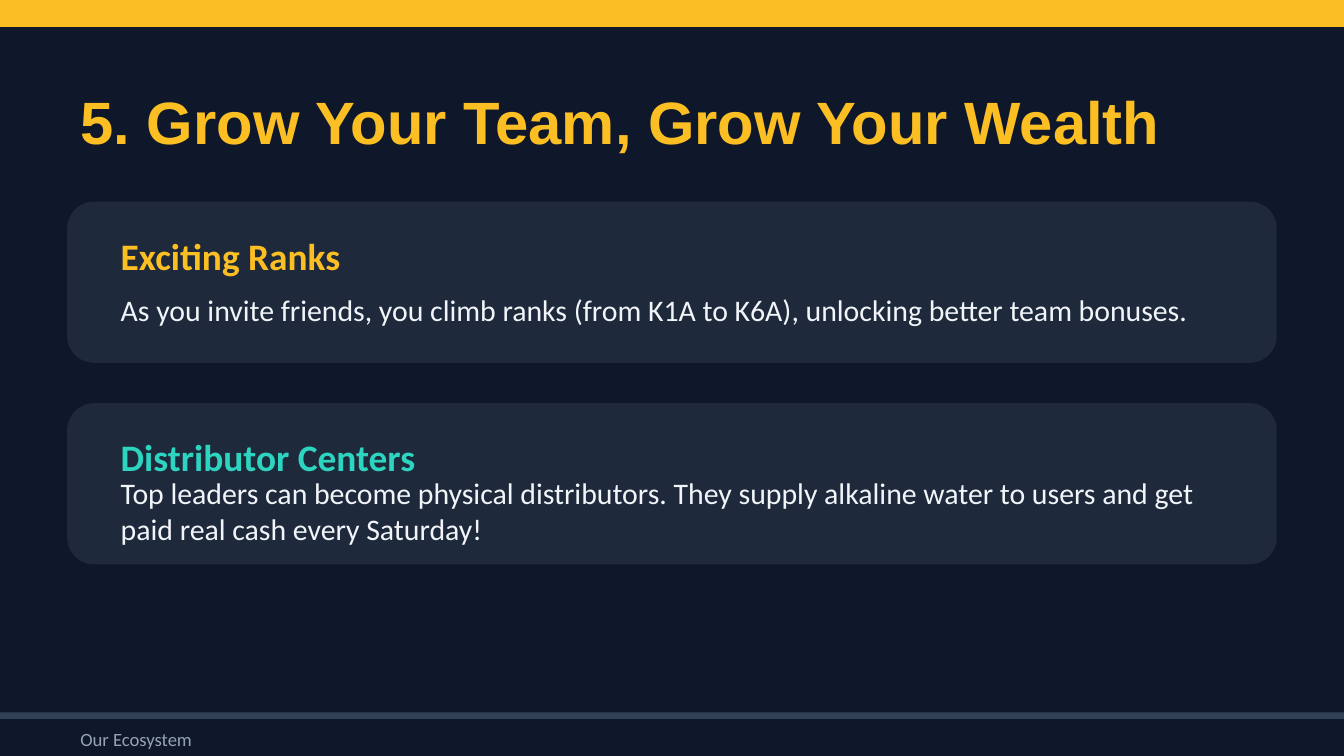
from dataclasses import dataclass

from pptx import Presentation
from pptx.dml.color import RGBColor
from pptx.enum.shapes import MSO_SHAPE
from pptx.enum.text import MSO_ANCHOR, MSO_AUTO_SIZE, PP_ALIGN
from pptx.util import Pt

RECT, ROUND_RECT = MSO_SHAPE.RECTANGLE, MSO_SHAPE.ROUNDED_RECTANGLE
MIDDLE, LEFT, NO_FIT = MSO_ANCHOR.MIDDLE, PP_ALIGN.LEFT, MSO_AUTO_SIZE.NONE
PX = 4572
WIDTH, HEIGHT = 2000, 1125
TITLE_ONLY = 5


@dataclass(frozen=True)
class Theme:
    background: str = "0F172A"
    card: str = "1E293B"
    rule: str = "334155"
    gold: str = "FBBF24"
    teal: str = "2DD4BF"
    text: str = "F1F5F9"
    muted: str = "94A3B8"
    heading_font: str = "Arial"
    body_font: str = "Calibri"
    title_size: int = 32
    card_title_size: int = 20
    body_size: int = 16
    footer_size: int = 10


THEME = Theme()


def emu(*lengths):
    return [length * PX for length in lengths]


def add_block(s, kind, box, color):
    sp = s.shapes.add_shape(kind, *emu(*box))
    sp.shadow.inherit = False
    sp.fill.solid()
    sp.fill.fore_color.rgb = RGBColor.from_string(color)
    sp.line.fill.background()


def write(sp, text, color, size, font=THEME.body_font, bold=False):
    tf = sp.text_frame
    frame = {"word_wrap": True, "auto_size": NO_FIT, "vertical_anchor": MIDDLE}
    for name, value in frame.items():
        setattr(tf, name, value)
    p = tf.paragraphs[0]
    p.alignment = LEFT
    r = p.add_run()
    r.text = text
    for name, value in {"name": font, "size": Pt(size), "bold": bold}.items():
        setattr(r.font, name, value)
    r.font.color.rgb = RGBColor.from_string(color)


def add_text(s, box, text, color, size, bold=False):
    write(s.shapes.add_textbox(*emu(*box)), text, color, size, bold=bold)


def add_title(s, box, text):
    sp = s.shapes.title
    sp.left, sp.top, sp.width, sp.height = emu(*box)
    write(sp, text, THEME.gold, THEME.title_size, THEME.heading_font, True)


def add_card(s, box, heading, color, body):
    x, y, w, h = box
    pad_x, pad_y, row = 60, 40, 80
    add_block(s, ROUND_RECT, box, THEME.card)
    left, top, inner = x + pad_x, y + pad_y, w - 2 * pad_x
    add_text(s, (left, top, inner, row), heading, color, THEME.card_title_size, True)
    add_text(s, (left, top + row, inner, row), body, THEME.text, THEME.body_size)


def add_footer(s, box, text):
    x, y, w, h = box
    add_block(s, RECT, (x, y, w, 10), THEME.rule)
    add_text(s, (x + 100, y + 20, 400, 40), text, THEME.muted, THEME.footer_size)


def main():
    prs = Presentation()
    prs.slide_width, prs.slide_height = emu(WIDTH, HEIGHT)
    s = prs.slides.add_slide(prs.slide_layouts[TITLE_ONLY])
    s.background.fill.solid()
    s.background.fill.fore_color.rgb = RGBColor.from_string(THEME.background)

    add_block(s, RECT, (0, 0, WIDTH, 40), THEME.gold)
    add_footer(s, (0, 1060, WIDTH, 65), "Our Ecosystem")
    add_title(s, (100, 100, 1800, 160), "5. Grow Your Team, Grow Your Wealth")

    cards = [
        ("Exciting Ranks", THEME.gold,
         "As you invite friends, you climb ranks (from K1A to K6A), "
         "unlocking better team bonuses."),
        ("Distributor Centers", THEME.teal,
         "Top leaders can become physical distributors. They supply alkaline "
         "water to users and get paid real cash every Saturday!"),
    ]
    card_top, card_height, gap = 300, 240, 60
    for i, card in enumerate(cards):
        y = card_top + i * (card_height + gap)
        add_card(s, (100, y, 1800, card_height), *card)

    prs.save("out.pptx")


if __name__ == "__main__":
    main()
